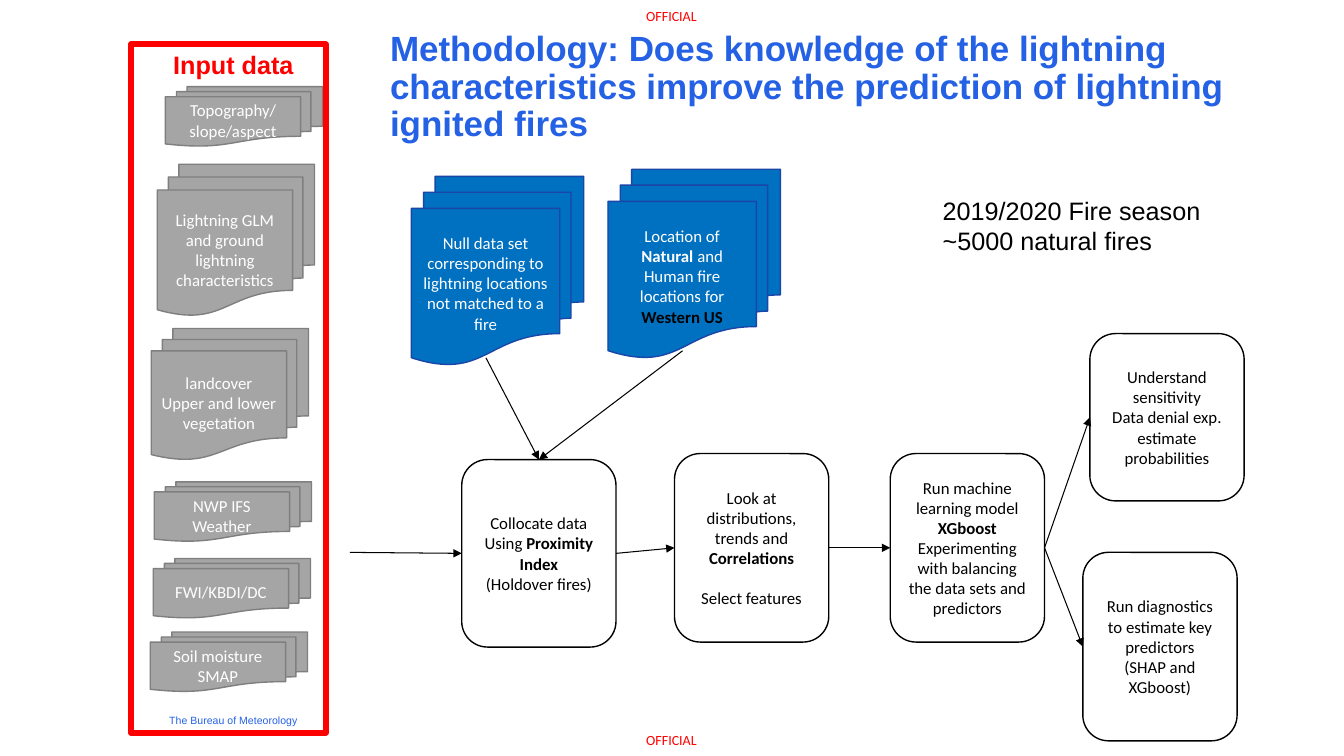
from lxml.etree import SubElement
from pptx import Presentation
from pptx.dml.color import RGBColor
from pptx.enum.shapes import MSO_CONNECTOR, MSO_SHAPE
from pptx.enum.text import MSO_ANCHOR, PP_ALIGN
from pptx.oxml.ns import qn
from pptx.util import Inches, Pt

COLOURS = {
    "white": "FFFFFF", "black": "000000", "red": "FF0000", "title": "2461E5",
    "grey": "A5A5A5", "grey line": "7F7F7F", "blue": "0070C0", "blue line": "1A46A7",
}
BOLD = {"bold": True}

# A paragraph is a plain string or a list of (text, font format) runs.
TITLE = ("Methodology: Does knowledge of the lightning characteristics "
         "improve the prediction of lightning ignited fires")

# Input data stacks: left, top, height, paragraphs
INPUT_WIDTH = 1.56
INPUTS = [
    (1.64, 0.86, 0.59, ["Topography/slope/aspect"]),
    (1.56, 1.63, 1.5, ["Lightning GLM and ground lightning characteristics"]),
    (1.5, 3.26, 1.3, ["landcover", "Upper and lower vegetation"]),
    (1.53, 4.78, 0.59, ["NWP IFS Weather"]),
    (1.52, 5.54, 0.59, ["FWI/KBDI/DC"]),
    (1.49, 6.27, 0.59, ["Soil moisture SMAP"]),
]

# Fire data stacks: name -> left, top, paragraphs
FIRE_SIZE = (1.71, 1.87)
FIRE_DATA = {
    "null": (4.08, 1.75, ["Null data set corresponding to lightning locations "
                          "not matched to a fire"]),
    "fires": (6.03, 1.68, [[("Location of ", {}), ("Natural ", BOLD),
                            ("and Human fire locations for ", {}),
                            ("Western US", {"bold": True, "colour": "black"})]]),
}

# Process steps: name -> left, top, height, paragraphs
STEP_WIDTH = 1.53
STEPS = {
    "collocate": (4.58, 4.56, 1.86, [
        "Collocate data", [("Using ", {}), ("Proximity Index", BOLD)], "(Holdover fires)"]),
    "explore": (6.69, 4.5, 1.87, [
        "Look at distributions, trends and", [("Correlations", BOLD)], "Select features"]),
    "model": (8.83, 4.5, 1.87, [
        "Run machine learning model", [("XGboost", BOLD)],
        "Experimenting with balancing the data sets and predictors"]),
    "sensitivity": (10.81, 3.31, 1.66, [
        "Understand sensitivity", "Data denial exp. estimate probabilities"]),
    "diagnostics": (10.74, 5.48, 1.87, [
        "Run diagnostics to estimate key predictors", "(SHAP and XGboost)"]),
}

TOP, LEFT, BOTTOM, RIGHT = range(4)
# Arrows: start shape, its side, end shape, its side
ARROWS = [
    ("null", BOTTOM, "collocate", TOP),
    ("fires", BOTTOM, "collocate", TOP),
    ("collocate", RIGHT, "explore", LEFT),
    ("explore", RIGHT, "model", LEFT),
    ("model", RIGHT, "sensitivity", LEFT),
    ("model", RIGHT, "diagnostics", LEFT),
]
INPUT_ARROW_START = (3.47, 5.48)
# The lower edge of a stack's front page, from the left and top of the stack
STACK_FOOT = (0.74, 1.8)

# Text boxes: left, top, width, height, paragraphs, font format
LABELS = [
    (1.58, 6.95, 3.2, 0.4, ["The Bureau of Meteorology"],
     {"name": "Arial", "size": 7.5, "colour": "title"}),
    (3.77, 0.26, 9.57, 0.87, [TITLE],
     {"name": "Arial", "size": 25, "colour": "title", "bold": True}),
    (1.62, 0.44, 1.44, 0.4, ["Input data"],
     {"name": "Arial", "size": 18, "colour": "red", "bold": True}),
    (9.25, 1.89, 2.78, 0.71, ["2019/2020 Fire season", "~5000 natural fires"],
     {"name": "Arial", "size": 18, "colour": "black"}),
]
MARKING_TOPS = (0.07, 7.26)
MARKING_FONT = {"name": "Calibri", "size": 10, "colour": "red"}


def rgb(name):
    return RGBColor.from_string(COLOURS[name])


def style_font(font, formats):
    for key, value in formats.items():
        if key == "colour":
            font.color.rgb = rgb(value)
        else:
            setattr(font, key, Pt(value) if key == "size" else value)


def write(frame, paragraphs, formats, align=PP_ALIGN.LEFT):
    frame.word_wrap = True
    for index, content in enumerate(paragraphs):
        para = frame.paragraphs[0] if index == 0 else frame.add_paragraph()
        para.alignment = align
        runs = [(content, {})] if isinstance(content, str) else content
        for text, extra in runs:
            span = para.add_run()
            span.text = text
            style_font(span.font, {**formats, **extra})


def add_label(page, left, top, width, height, paragraphs, formats):
    box = page.shapes.add_textbox(*map(Inches, (left, top, width, height)))
    write(box.text_frame, paragraphs, formats)
    return box


def add_block(page, kind, place, line, weight, fill=None):
    block = page.shapes.add_shape(kind, *map(Inches, place))
    block.shadow.inherit = False
    block.line.color.rgb = rgb(line)
    block.line.width = Pt(weight)
    if fill:
        block.fill.solid()
        block.fill.fore_color.rgb = rgb(fill)
    else:
        block.fill.background()
    return block


def add_node(page, kind, place, paragraphs, fill, line, ink):
    node = add_block(page, kind, place, line, 1, fill)
    node.text_frame.vertical_anchor = MSO_ANCHOR.MIDDLE
    write(node.text_frame, paragraphs,
          {"name": "Calibri", "size": 12, "colour": ink}, PP_ALIGN.CENTER)
    return node


def add_arrow(page, start=(0, 0)):
    x, y = map(Inches, start)
    arrow = page.shapes.add_connector(MSO_CONNECTOR.STRAIGHT, x, y, x, y)
    arrow.line.color.rgb = rgb("black")
    arrow.line.width = Pt(0.75)
    SubElement(arrow.line._get_or_add_ln(), qn("a:tailEnd"), type="triangle")
    SubElement(arrow._element.spPr, qn("a:effectLst"))
    return arrow


def main():
    deck = Presentation()
    deck.slide_width, deck.slide_height = Inches(13.33), Inches(7.5)
    page = deck.slides.add_slide(deck.slide_layouts[6])
    stack = MSO_SHAPE.FLOWCHART_MULTIDOCUMENT

    for top in MARKING_TOPS:
        frame = add_label(page, 6.41, top, 0.53, 0.17, ["OFFICIAL"], MARKING_FONT).text_frame
        frame.word_wrap = False
        for side in ("left", "top", "right", "bottom"):
            setattr(frame, f"margin_{side}", 0)

    for left, top, height, paragraphs in INPUTS:
        add_node(page, stack, (left, top, INPUT_WIDTH, height), paragraphs,
                 "grey", "grey line", "white")

    nodes = {}
    for name, (left, top, paragraphs) in FIRE_DATA.items():
        nodes[name] = add_node(page, stack, (left, top, *FIRE_SIZE), paragraphs,
                               "blue", "blue line", "white")
    for name, (left, top, height, paragraphs) in STEPS.items():
        nodes[name] = add_node(page, MSO_SHAPE.ROUNDED_RECTANGLE,
                               (left, top, STEP_WIDTH, height), paragraphs,
                               "white", "black", "black")
    nodes["explore"].text_frame.paragraphs[-1].space_before = Pt(14.5)

    for start, start_side, end, end_side in ARROWS:
        arrow = add_arrow(page)
        arrow.begin_connect(nodes[start], start_side)
        arrow.end_connect(nodes[end], end_side)
        if start in FIRE_DATA:
            left, top, _ = FIRE_DATA[start]
            arrow.begin_x = Inches(left + STACK_FOOT[0])
            arrow.begin_y = Inches(top + STACK_FOOT[1])
    add_arrow(page, INPUT_ARROW_START).end_connect(nodes["collocate"], LEFT)

    add_block(page, MSO_SHAPE.RECTANGLE, (1.3, 0.44, 1.93, 6.83), "red", 4.25)
    footer, title, *_ = [add_label(page, *label) for label in LABELS]
    footer.text_frame.vertical_anchor = MSO_ANCHOR.MIDDLE
    title.text_frame.paragraphs[0].line_spacing = 0.9
    deck.save("out.pptx")


if __name__ == "__main__":
    main()
